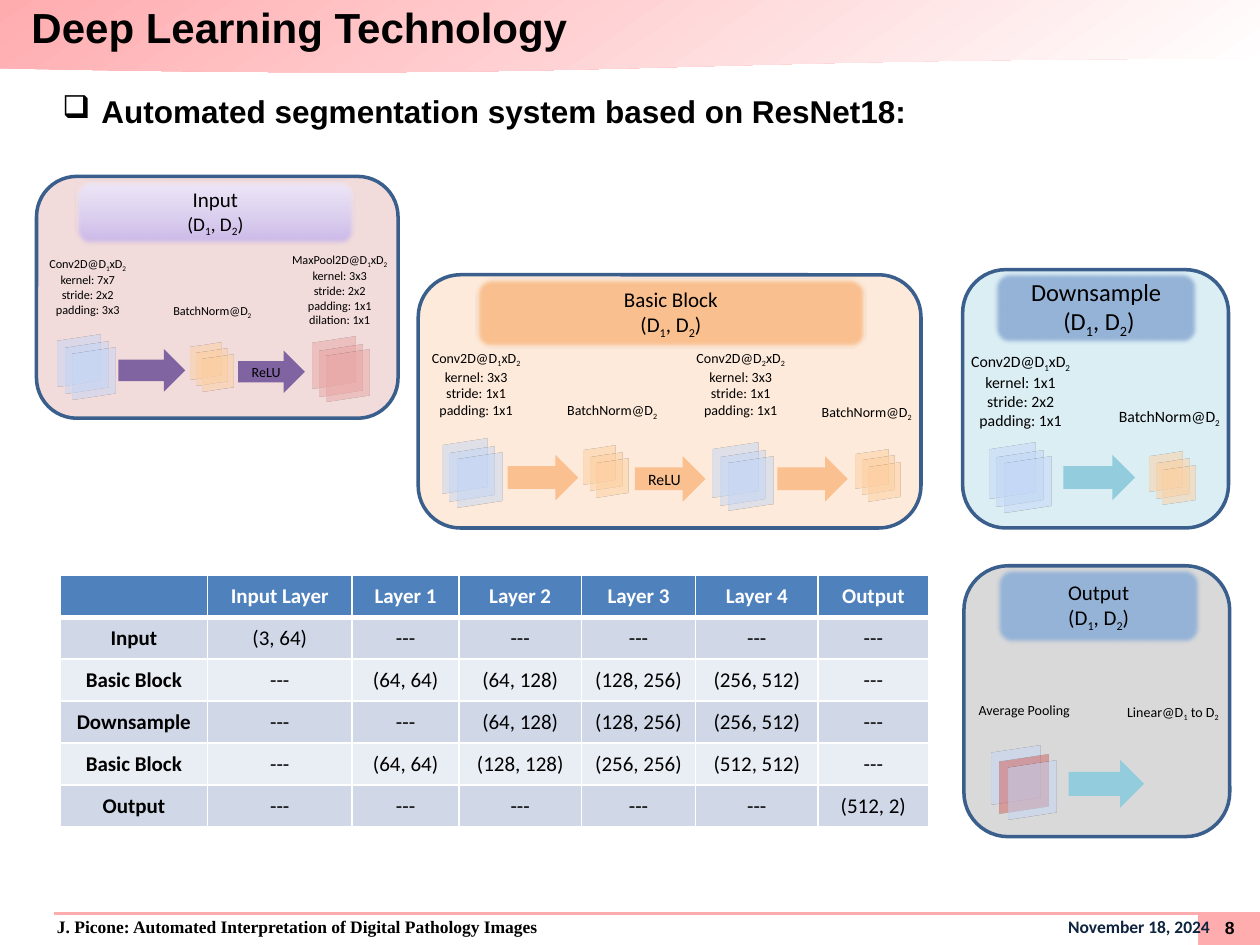
from dataclasses import dataclass

from lxml import etree
from pptx import Presentation
from pptx.dml.color import RGBColor
from pptx.enum import shapes, text
from pptx.oxml import ns
from pptx.util import Pt


@dataclass(frozen=True)
class Theme:
    black: str = "000000"
    white: str = "FFFFFF"
    pink: str = "FFACAF"
    navy: str = "0F243E"
    panel_line: str = "3A5F8C"
    title_line: str = "7D60A0"
    purple: str = "8064A2"
    orange: str = "FAC090"
    title_blue: str = "95B3D7"
    aqua: str = "93CDDD"
    table_head: str = "4F81BD"
    table_bands: tuple = ("D0D8E8", "E9EDF4")
    lilac: tuple = ((0, "C9B5E8"), (35, "D8CBEE"), (100, "F0EAF9"))
    sans: str = "Arial"
    body: str = "Calibri"
    serif: str = "Times New Roman"
    heading_size: float = 24
    bullet_size: float = 18
    table_size: float = 12
    footer_size: float = 10


T = Theme()
SHAPE = shapes.MSO_SHAPE
CENTER = text.PP_ALIGN.CENTER

# Feature maps: fill, outline and outline width
BLUE = ("B4C7E7", "254061", 1.5)
AMBER = ("FAC090", "E46C0A", 2.25)
ROSE = ("D99694", "632523", 1.5)
RED = ("C0504D", "632523", 1.5)


def add_xml(parent, tag, **attributes):
    return etree.SubElement(parent, ns.qn(tag), {k: str(v) for k, v in attributes.items()})


def rgb(color):
    return RGBColor.from_string(color)


def points(*lengths):
    return [Pt(length) for length in lengths]


def style(font, size, name=T.body, color=T.black, bold=False):
    font.size, font.name, font.bold = Pt(size), name, bold
    font.color.rgb = rgb(color)


def set_gradient(shape, stops, angle):
    gradient = etree.Element(ns.qn("a:gradFill"), rotWithShape="1")
    stop_list = add_xml(gradient, "a:gsLst")
    for position, color in stops:
        stop = add_xml(stop_list, "a:gs", pos=position * 1000)
        add_xml(stop, "a:srgbClr", val=color)
    add_xml(gradient, "a:lin", ang=angle * 60000, scaled=0)
    shape.fill.background()
    no_fill = shape._element.spPr.find(ns.qn("a:noFill"))
    shape._element.spPr.replace(no_fill, gradient)


def set_look(shape, fill=None, line=None, width=1):
    shape.shadow.inherit = False
    if fill:
        shape.fill.solid()
        shape.fill.fore_color.rgb = rgb(fill)
    if line:
        shape.line.color.rgb = rgb(line)
        shape.line.width = Pt(width)
    else:
        shape.line.fill.background()


def add_text(slide, box, margins=(0, 0)):
    frame = slide.shapes.add_textbox(*points(*box)).text_frame
    frame.word_wrap = True
    frame.margin_left = frame.margin_right = Pt(margins[0])
    frame.margin_top = frame.margin_bottom = Pt(margins[1])
    return frame


def write_lines(frame, lines, sizes):
    """Centred lines; the character after each underscore is a subscript."""
    frame.text = "\n".join(line.split("_")[0] for line in lines)
    for paragraph, line, size in zip(frame.paragraphs, lines, sizes):
        paragraph.alignment = CENTER
        for part in line.split("_")[1:]:
            subscript = paragraph.add_run()
            subscript.text = part[0]
            subscript.font._element.set("baseline", "-25000")
            if part[1:]:
                paragraph.add_run().text = part[1:]
        for run in paragraph.runs:
            style(run.font, size)


def add_stack(slide, x, y, size, steps, maps):
    """Three translucent feature maps turned in space, each further down right."""
    for (dx, dy), (fill, line, width) in zip(steps, maps):
        feature_map = slide.shapes.add_shape(
            SHAPE.RECTANGLE, *points(x + dx * size, y + dy * size, size, size))
        set_look(feature_map, fill, line, width)
        properties = feature_map._element.spPr
        add_xml(properties.find(ns.qn("a:solidFill"))[0], "a:alpha", val=30000)
        scene = add_xml(properties, "a:scene3d")
        add_xml(scene, "a:camera", prst="isometricOffAxis1Right")
        add_xml(scene, "a:lightRig", rig="threePt", dir="t")
        add_xml(properties, "a:sp3d", extrusionH=Pt(0.1))


def add_panel(slide, box, fill, title_box, title, title_sizes, title_fill,
              caption_size, captions, map_size, stacks, arrow_size, arrow_fill, arrows):
    """One network stage; the parts are placed relative to the panel box."""
    left, top, _, _ = box
    panel = slide.shapes.add_shape(SHAPE.ROUNDED_RECTANGLE, *points(*box))
    set_look(panel, fill, T.panel_line, 2)

    # Feature maps
    wide_steps = ((0, 0), (0.15, 0.16), (0.3, 0.27))
    even_steps = ((0, 0), (0.18, 0.18), (0.36, 0.36))
    for x, y, maps in stacks:
        small = maps[0] == AMBER
        add_stack(slide, left + x, top + y, map_size * (0.71 if small else 1),
                  even_steps if small else wide_steps, maps)

    # Layer captions
    for x, y, width, lines in captions:
        height = 7.2 + 1.22 * caption_size * len(lines)
        frame = add_text(slide, (left + x, top + y, width, height), (0, 3.6))
        write_lines(frame, lines, [caption_size] * len(lines))

    # Soft-edged title
    x, y, width, height = title_box
    heading = slide.shapes.add_shape(
        SHAPE.ROUNDED_RECTANGLE, *points(left + x, top + y, width, height))
    if isinstance(title_fill, str):
        set_look(heading, title_fill, T.title_line, 0.75)
    else:
        set_look(heading, None, T.title_line, 0.75)
        set_gradient(heading, title_fill, 270)
    effects = heading._element.spPr.find(ns.qn("a:effectLst"))
    add_xml(effects, "a:softEdge", rad=Pt(2.5))
    heading.text_frame.vertical_anchor = text.MSO_ANCHOR.MIDDLE
    write_lines(heading.text_frame, title, title_sizes)

    # Flow arrows
    for x, y, label in arrows:
        arrow = slide.shapes.add_shape(
            SHAPE.RIGHT_ARROW, *points(left + x, top + y, *arrow_size))
        set_look(arrow, arrow_fill)
        if label:
            arrow.text_frame.margin_left = arrow.text_frame.margin_right = 0
            write_lines(arrow.text_frame, [label], [caption_size + 1])


def add_layer_table(slide, box, widths, rows):
    table = slide.shapes.add_table(len(rows), len(widths), *points(*box)).table
    for column, width in zip(table.columns, widths):
        column.width = Pt(width)
    for r, row in enumerate(rows):
        table.rows[r].height = Pt(box[3] / len(rows))
        for c, value in enumerate(row):
            cell = table.cell(r, c)
            cell.text = value
            cell.vertical_anchor = text.MSO_ANCHOR.MIDDLE
            paragraph = cell.text_frame.paragraphs[0]
            paragraph.alignment = CENTER
            style(paragraph.font, T.table_size, color=T.black if r else T.white,
                  bold=r == 0 or c == 0)
            for side in "LRTB":
                under_head = (r, side) in ((0, "B"), (1, "T"))
                border = add_xml(cell._tc.get_or_add_tcPr(), f"a:ln{side}",
                                 w=Pt(3 if under_head else 1))
                add_xml(add_xml(border, "a:solidFill"), "a:srgbClr", val=T.white)
            cell.fill.solid()
            cell.fill.fore_color.rgb = rgb(T.table_bands[(r - 1) % 2] if r else T.table_head)


def add_header(slide, box, title, bullet):
    left, top, width, height = box
    band = slide.shapes.add_shape(SHAPE.FLOWCHART_DOCUMENT, *points(*box))
    set_look(band)
    set_gradient(band, ((0, T.pink), (100, T.white)), 55)

    topic = add_text(slide, (left + 18, top + 52.6, width - 36, 470))
    topic.text = bullet
    paragraph = topic.paragraphs[0]
    paragraph.level = 1
    properties = paragraph._p.get_or_add_pPr()
    properties.set("marL", str(Pt(40)))
    properties.set("indent", str(Pt(-22.3)))
    add_xml(properties, "a:buFont", typeface="Wingdings", charset=2)
    add_xml(properties, "a:buChar", char="q")
    style(paragraph.runs[0].font, T.bullet_size, T.sans, bold=True)

    heading = add_text(slide, (left + 18, top, width - 36, 31))
    heading.text = title
    heading.vertical_anchor = text.MSO_ANCHOR.MIDDLE
    style(heading.paragraphs[0].runs[0].font, T.heading_size, T.sans, bold=True)


def add_footer(slide, box, credit, date, number):
    left, top, width, height = box
    corner = slide.shapes.add_shape(SHAPE.RECTANGLE, *points(left + 684.7, top, 36, height))
    set_look(corner, T.pink)

    credits = add_text(slide, (left + 2.9, top - 0.7, width - 2.9, height), (7.2, 3.6))
    credits.margin_left = Pt(29.7)
    credits.text = credit
    paragraph = credits.paragraphs[0]
    paragraph.line_spacing = 0.95
    tabs = add_xml(paragraph._p.get_or_add_pPr(), "a:tabLst")
    add_xml(tabs, "a:tab", pos=Pt(658.7), algn="r")
    style(paragraph.runs[0].font, T.footer_size, T.serif, bold=True)
    date_run = paragraph.add_run()
    date_run.text = "\t" + date
    style(date_run.font, T.footer_size, color=T.navy, bold=True)

    rule = slide.shapes.add_connector(
        shapes.MSO_CONNECTOR.STRAIGHT, *points(left + 31, top + 0.7, left + width, top + 0.7))
    rule.line.color.rgb = rgb(T.pink)
    rule.line.width = Pt(1.5)
    add_xml(rule._element.spPr, "a:effectLst")

    page = add_text(slide, (left + 688.3, top + 2.9, 28.8, 12.2))
    page.text = number
    page.vertical_anchor = text.MSO_ANCHOR.MIDDLE
    page.paragraphs[0].alignment = CENTER
    style(page.paragraphs[0].runs[0].font, T.footer_size, T.sans, bold=True)


def conv(channels, kernel, stride, padding):
    return [f"Conv2D@{channels}", f"kernel: {kernel}", f"stride: {stride}", f"padding: {padding}"]


def main():
    deck = Presentation()
    deck.slide_width, deck.slide_height = points(720, 540)
    slide = deck.slides.add_slide(deck.slide_layouts[6])
    add_header(slide, (0, 0, 720, 41.8), "Deep Learning Technology",
               "Automated segmentation system based on ResNet18:")
    add_footer(slide, (0, 521.3, 720, 18.7),
               "J. Picone: Automated Interpretation of Digital Pathology Images",
               "November 18, 2024", "8")

    dims, norm, none = "(D_1, D_2)", ["BatchNorm@D_2"], "---"
    add_layer_table(slide, (34.4, 328.7, 496.4, 144), (84.2, 82.6, 61.2, 69.8, 65.4, 69.8, 63.4), [
        ["", "Input Layer", "Layer 1", "Layer 2", "Layer 3", "Layer 4", "Output"],
        ["Input", "(3, 64)", none, none, none, none, none],
        ["Basic Block", none, "(64, 64)", "(64, 128)", "(128, 256)", "(256, 512)", none],
        ["Downsample", none, none, "(64, 128)", "(128, 256)", "(256, 512)", none],
        ["Basic Block", none, "(64, 64)", "(128, 128)", "(256, 256)", "(512, 512)", none],
        ["Output", none, none, none, none, none, "(512, 2)"]])

    # Input stage
    pool = ["MaxPool2D@D_1xD_2", "kernel: 3x3", "stride: 2x2", "padding: 1x1", "dilation: 1x1"]
    add_panel(slide, (20.9, 100.8, 206.6, 138.2), "F2DCDB",
              (22.3, 2.2, 159.8, 36.7), ["Input", dims], (12, 11), T.lilac,
              7, [(-5, 41.8, 68.4, conv("D_1xD_2", "7x7", "2x2", "3x3")),
                  (66.2, 69.1, 68.4, norm), (135.4, 39.6, 75.6, pool)],
              27.4, [(10.8, 91.4, [BLUE] * 3), (87.1, 95.8, [AMBER] * 3), (156.2, 92.9, [ROSE] * 3)],
              (38.2, 24.5), T.purple, [(115.2, 99.4, "ReLU"), (46.8, 98.6, "")])

    # Basic block
    add_panel(slide, (239, 157, 287.3, 144.7), "FDEADA",
              (33.1, 2.2, 222.5, 39.6), ["Basic Block", dims], (12, 12), T.orange,
              8, [(-2.9, 38.9, 72, conv("D_1xD_2", "3x3", "1x1", "1x1")), (74.9, 69.1, 72, norm),
                  (148.3, 38.9, 72, conv("D_2xD_2", "3x3", "1x1", "1x1")), (220.3, 69.8, 72, norm)],
              28.8, [(12.2, 95, [BLUE] * 3), (93.6, 98.6, [AMBER] * 3),
                     (167, 97.2, [BLUE] * 3), (249.1, 100.8, [AMBER] * 3)],
              (40.3, 25.9), T.orange, [(51.1, 103, ""), (123.8, 103.7, "ReLU"), (205.2, 103.7, "")])

    # Downsample stage
    add_panel(slide, (550.1, 154.1, 151.9, 147.6), "DBEEF4",
              (18, 1.4, 116.6, 41), ["Downsample", " " + dims], (14, 14), T.title_blue,
              9, [(-3.6, 43.2, 73.4, conv("D_1xD_2", "1x1", "2x2", "1x1")), (81.4, 74.9, 73.4, norm)],
              29.5, [(13.7, 100.1, [BLUE] * 3), (105.8, 105.1, [AMBER] * 3)],
              (41, 25.9), T.aqua, [(57.6, 105.8, "")])

    # Output stage
    add_panel(slide, (550.8, 323.3, 151.9, 154.8), "D9D9D9",
              (18.7, 1.4, 116.6, 43.2), ["Output", dims], (12, 12), T.title_blue,
              8, [(-3.6, 74.2, 76.3, ["Average Pooling"]), (83.5, 74.9, 72, ["Linear@D_1 to D_2"])],
              31, [(14.4, 104.4, [BLUE, RED, BLUE])],
              (43.2, 27.4), T.aqua, [(59.8, 110.9, "")])

    deck.save("out.pptx")


if __name__ == "__main__":
    main()
